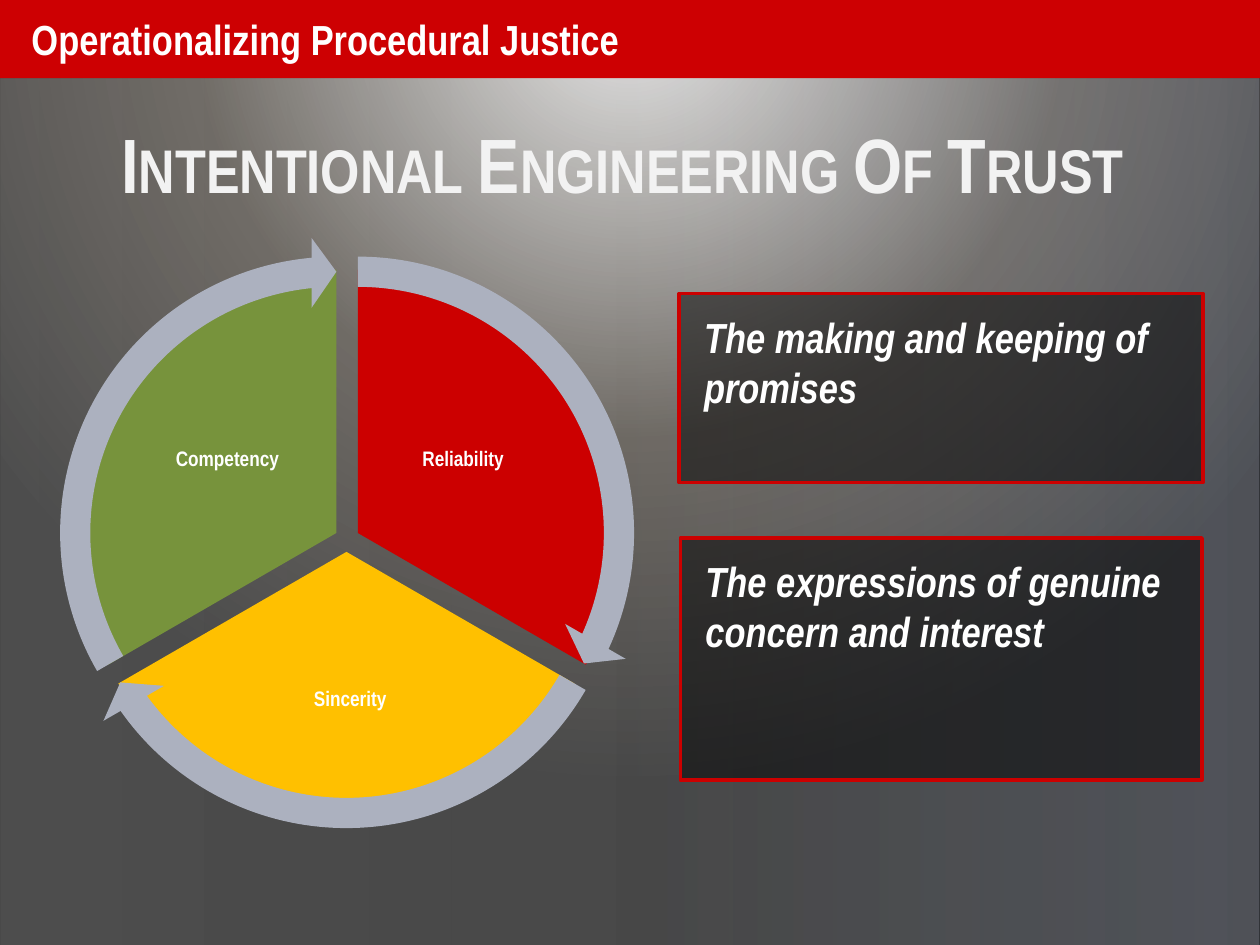
from pptx import Presentation
from pptx.dml.color import RGBColor
from pptx.enum.shapes import MSO_SHAPE
from pptx.enum.text import MSO_ANCHOR, PP_ALIGN
from pptx.oxml import parse_xml
from pptx.oxml.ns import nsdecls, qn
from pptx.util import Inches, Pt

FONT = "Arial Narrow"
WHITE = RGBColor(0xFF, 0xFF, 0xFF)
OFF_WHITE = RGBColor(0xF2, 0xF2, 0xF2)
BLACK = RGBColor(0, 0, 0)
BANNER_RED = RGBColor(0xCD, 0x00, 0x02)
RED = RGBColor(0xCC, 0x00, 0x00)
GOLD = RGBColor(0xFF, 0xC0, 0x00)
GREEN = RGBColor(0x77, 0x93, 0x3C)
ARROW_GREY = RGBColor(0xAC, 0xB1, 0xBF)

# Label, colour, slice offset, pie angles, arrow angles, label box.
# Angles are in units of 0.6 of a degree; places are relative to the wheel.
SLICES = [
    ("Reliability", RED, (0.17, 0), (162, 18), (14.725, 161.994),
     (2.61, 1.15, 1.49, 1.24)),
    ("Sincerity", GOLD, (0.08, 0.15), (18, 90), (86.72, 18.005),
     (1.34, 3.12, 2.24, 1.1)),
    ("Competency", GREEN, (0, 0), (90, 162), (158.73, 90),
     (0.74, 1.15, 1.49, 1.24)),
]


def gradient(stops, direction):
    """Return a gradFill element; stops are (position %, colour, opacity %)."""
    gs = "".join(
        f'<a:gs pos="{pos * 1000}"><a:srgbClr val="{color}">'
        f'<a:alpha val="{alpha * 1000}"/></a:srgbClr></a:gs>'
        for pos, color, alpha in stops)
    return parse_xml(f'<a:gradFill {nsdecls("a")} rotWithShape="1">'
                     f'<a:gsLst>{gs}</a:gsLst>{direction}</a:gradFill>')


def replace_fill(parent, fill):
    old = parent.find(qn("a:solidFill"))
    parent.replace(old, fill)


def add_shape(shapes, kind, box, color, adjustments=()):
    sp = shapes.add_shape(kind, *map(Inches, box))
    sp.shadow.inherit = False
    sp.fill.solid()
    sp.fill.fore_color.rgb = color
    sp.line.fill.background()
    for i, value in enumerate(adjustments):
        sp.adjustments[i] = value
    return sp


def write(sp, text, size, color=WHITE, align=PP_ALIGN.LEFT,
          anchor=MSO_ANCHOR.TOP, italic=False):
    tf = sp.text_frame
    tf.word_wrap = True
    tf.vertical_anchor = anchor
    p = tf.paragraphs[0]
    p.text = text
    p.alignment = align
    r = p.runs[0]
    r.font.name, r.font.size = FONT, Pt(size)
    r.font.bold, r.font.italic = True, italic
    r.font.color.rgb = color
    return p


def add_background(s):
    s.background.fill.solid()
    stops = [(0, "FFFFFF", 100), (56, "3D362D", 100), (100, "000000", 100)]
    circle = ('<a:path path="circle"><a:fillToRect l="50000" t="-80000" '
              'r="50000" b="180000"/></a:path>')
    bg = s.element.find(".//" + qn("p:bgPr"))
    replace_fill(bg, gradient(stops, circle))


def add_veil(s, box):
    sp = add_shape(s.shapes, MSO_SHAPE.RECTANGLE, box, WHITE)
    stops = [(0, "BFBFBF", 40), (50, "BFBFBF", 37), (100, "E0E9FB", 35)]
    replace_fill(sp.element.spPr, gradient(stops, '<a:lin ang="0" scaled="0"/>'))


def add_banner(s, box, text):
    sp = add_shape(s.shapes, MSO_SHAPE.RECTANGLE, box, BANNER_RED)
    write(sp, text, 24, anchor=MSO_ANCHOR.MIDDLE)
    sp.text_frame.margin_left = Inches(0.25)


def add_title(s, box, text):
    sp = s.shapes.add_textbox(*map(Inches, box))
    p = write(sp, text, 44, OFF_WHITE, PP_ALIGN.CENTER, MSO_ANCHOR.MIDDLE)
    p.runs[0].font._element.set("cap", "small")


def add_wheel(s, box):
    """Place three slices, their labels and the arrows that circle them."""
    left, top, size = box
    shapes = s.shapes.add_group_shape().shapes
    inset = 0.26
    pie_size = size - 2 * inset
    for label, color, (dx, dy), angles, _, (lx, ly, w, h) in SLICES:
        add_shape(shapes, MSO_SHAPE.PIE,
                  (left + dx + inset, top + dy + inset, pie_size, pie_size),
                  color, angles)
        tb = shapes.add_textbox(*map(Inches, (left + lx, top + ly, w, h)))
        tf = tb.text_frame
        tf.margin_left = tf.margin_right = Inches(0.02)
        tf.margin_top = tf.margin_bottom = Inches(0.02)
        p = write(tb, label, 12, align=PP_ALIGN.CENTER, anchor=MSO_ANCHOR.MIDDLE)
        p.line_spacing = 0.9
    for _, _, (dx, dy), _, (end, start), _ in SLICES:
        add_shape(shapes, MSO_SHAPE.CIRCULAR_ARROW,
                  (left + dx, top + dy, size, size), ARROW_GREY,
                  (0.051, 3.275, end, start, 0.059))


def add_panel(s, box, text):
    sp = add_shape(s.shapes, MSO_SHAPE.RECTANGLE, box, BLACK)
    replace_fill(sp.element.spPr, parse_xml(
        f'<a:solidFill {nsdecls("a")}><a:srgbClr val="{BLACK}">'
        '<a:alpha val="50000"/></a:srgbClr></a:solidFill>'))
    sp.line.color.rgb = RED
    sp.line.width = Pt(2)
    left, top = box[:2]
    tb = s.shapes.add_textbox(*map(Inches, (left + 0.1, top + 0.09, 4, 0.91)))
    write(tb, text, 24, italic=True)


def main():
    prs = Presentation()
    prs.slide_width, prs.slide_height = Inches(10), Inches(7.5)
    s = prs.slides.add_slide(prs.slide_layouts[6])
    add_background(s)
    add_veil(s, (0, 0.62, 10, 6.88))
    add_banner(s, (0, 0, 10, 0.62), "Operationalizing Procedural Justice")
    add_title(s, (0.44, 0.83, 9, 0.92), "Intentional Engineering Of Trust")
    add_wheel(s, (0.32, 1.88, 4.7))
    add_panel(s, (5.39, 2.33, 4.16, 1.5), "The making and keeping of promises")
    add_panel(s, (5.4, 4.27, 4.14, 1.92),
              "The expressions of genuine concern and interest")
    prs.save("out.pptx")


if __name__ == "__main__":
    main()
